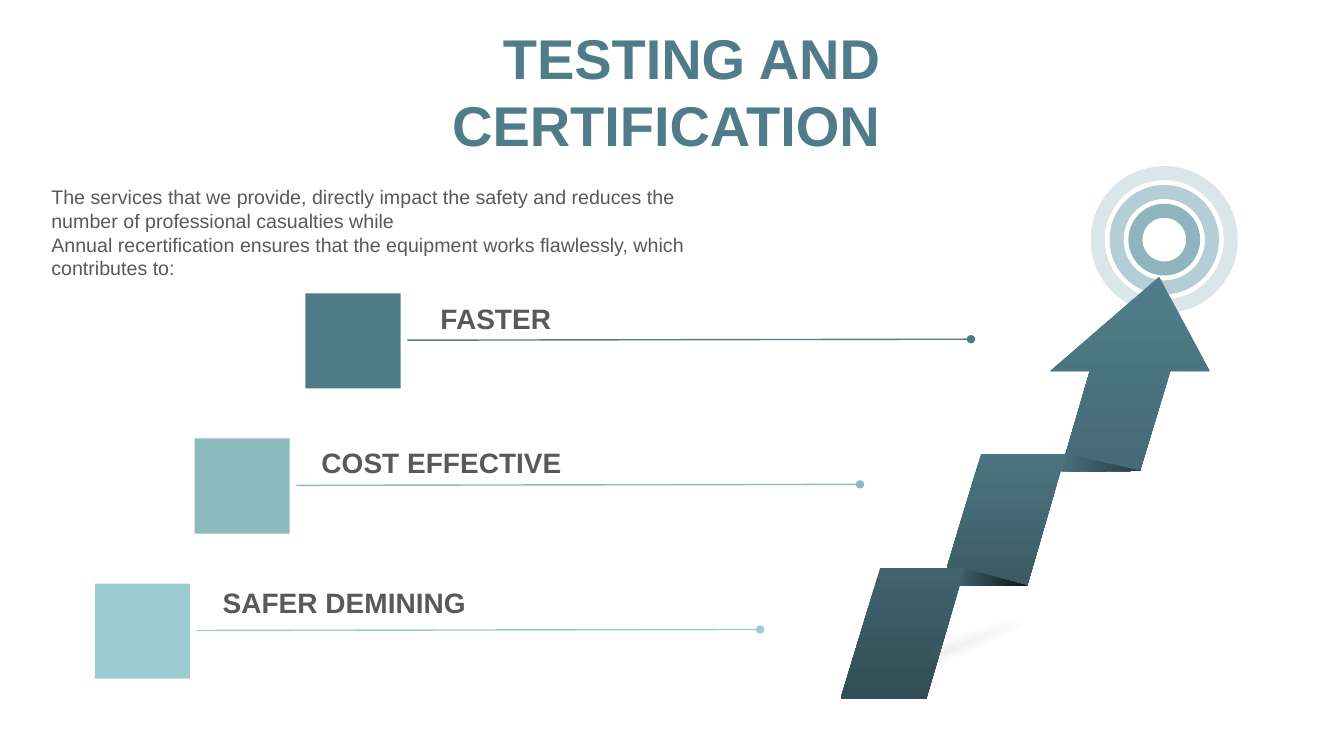
from pptx import Presentation, util as u
from pptx.dml.color import RGBColor
from pptx.enum import shapes, text
from pptx.oxml import parse_xml
from pptx.oxml.ns import nsdecls

THEME = {
    "font": "Arial", "title": 40, "label": 20, "body": 14,
    "teal": "507C89", "sage": "8CBABE", "aqua": "9CCCD2", "grey": "595959",
    "shadow": "808080", "rings": ("DAE6E9", "B5CDD4", "90B4BE"),
}

deck = Presentation()
deck.slide_width, deck.slide_height = u.Inches(13.33), u.Inches(7.5)
# The grid has 100 columns and 100 rows.
COL, ROW = deck.slide_width / 100, deck.slide_height / 100
slide = deck.slides.add_slide(deck.slide_layouts[6])
canvas = slide.shapes


def write(paragraphs, left, top, width, height, size, color, bold=False,
          align=text.PP_ALIGN.LEFT, insets=(0.1, 0.05, 0.1, 0.05)):
    """Add a wrapped text box placed in grid columns and rows."""
    frame = canvas.add_textbox(int(left * COL), int(top * ROW),
                               int(width * COL), int(height * ROW)).text_frame
    frame.word_wrap = True
    (frame.margin_left, frame.margin_top,
     frame.margin_right, frame.margin_bottom) = map(u.Inches, insets)
    for index, words in enumerate(paragraphs):
        paragraph = frame.add_paragraph() if index else frame.paragraphs[0]
        paragraph.alignment = align
        run = paragraph.add_run()
        run.text = words
        run.font.name, run.font.size, run.font.bold = THEME["font"], u.Pt(size), bold
        run.font.color.rgb = RGBColor.from_string(color)


def outline(points):
    """Add a closed, unlined polygon from grid points."""
    corners = [(int(x * COL), int(y * ROW)) for x, y in points]
    builder = canvas.build_freeform(*corners[0])
    builder.add_line_segments(corners[1:], close=True)
    polygon = builder.convert_to_shape()
    polygon.shadow.inherit = False
    polygon.line.fill.background()
    return polygon


# Target rings, from the outside in
for color, diameter in zip(THEME["rings"], (9.9, 7.1, 4.3)):
    side = int(diameter * COL)
    ring = canvas.add_shape(shapes.MSO_SHAPE.OVAL, int(86.63 * COL - side / 2),
                            int(31.7 * ROW - side / 2), side, side)
    ring.shadow.inherit = False
    ring.fill.background()
    ring.line.width = u.Pt(10)
    ring.line.color.rgb = RGBColor.from_string(color)

# Folded arrow: first colour, last colour, gradient angle, corners
arrow_parts = [
    ("507C89", "456B76", 270, [(86.25, 36.6), (90, 49.1), (87.08, 49.1), (84.83, 62.3),
                               (79.28, 60.1), (81.08, 49.1), (78.15, 49.1)]),
    ("48707B", "263C42", 0, [(79.28, 60.1), (84.83, 62.3), (78.9, 62.4)]),
    ("4B7581", "3A5B64", 270, [(73, 60), (79.3, 60), (76.43, 77.5),
                               (71.7, 75.2), (70.43, 75.2)]),
    ("3E616B", "0E1517", 0, [(71.7, 75.2), (76.43, 77.5), (71.33, 77.5)]),
    ("40636E", "324D55", 270, [(65.5, 75.1), (71.8, 75.1), (68.93, 92.4), (62.55, 92.4)]),
]
for first, last, angle, corners in arrow_parts:
    part = outline(corners)
    part.fill.gradient()
    part.fill.gradient_angle = angle
    for stop, color in zip(part.fill.gradient_stops, (first, last)):
        stop.color.rgb = RGBColor.from_string(color)

# Steps: label, colour, square left, label left, label top
steps = [
    ("FASTER", THEME["teal"], 22.73, 32.03, 39.2),
    ("COST EFFECTIVE", THEME["sage"], 14.48, 23.18, 58.27),
    ("SAFER DEMINING", THEME["aqua"], 7.05, 15.83, 76.8),
]
for index, (label, color, left, label_left, label_top) in enumerate(steps):
    top = 38.8 + 19.2 * index
    rule_left, rule_top = left + 7.58, top + 6.2
    rule = canvas.add_connector(
        shapes.MSO_CONNECTOR.STRAIGHT, int(rule_left * COL), int(rule_top * ROW),
        int((rule_left + 41.93) * COL), int((rule_top - 0.13) * ROW))
    rule.line.width = u.Pt(1)
    rule.line.color.rgb = RGBColor.from_string(color)
    rule.line._get_or_add_ln().append(parse_xml(f'<a:tailEnd type="oval" {nsdecls("a")}/>'))
    rule._element.spPr.append(parse_xml(f'<a:effectLst {nsdecls("a")}/>'))
    write([label], label_left, label_top, 38.25, 5.87, THEME["label"], THEME["grey"], bold=True)
    side = int(7.08 * COL)
    square = canvas.add_shape(shapes.MSO_SHAPE.RECTANGLE, int(left * COL),
                              int(top * ROW), side, side)
    square.shadow.inherit = False
    square.fill.solid()
    square.fill.fore_color.rgb = RGBColor.from_string(color)
    square.line.fill.background()

# Soft shadow cast by the arrow
cast = outline([(64.5, 87.5), (70.6, 88.2), (87.6, 75.4), (82.5, 76.4)])
cast.fill.solid()
cast.fill.fore_color.rgb = RGBColor.from_string(THEME["shadow"])
tint = cast._element.spPr.find(".//{*}srgbClr")
tint.append(parse_xml(f'<a:alpha val="25000" {nsdecls("a")}/>'))
effects = cast._element.spPr.find("{*}effectLst")
effects.append(parse_xml(f'<a:softEdge rad="{u.Inches(0.1)}" {nsdecls("a")}/>'))

write(["TESTING AND CERTIFICATION"], 26.78, 3.07, 39, 18, THEME["title"], THEME["teal"],
      bold=True, align=text.PP_ALIGN.RIGHT, insets=(0.08, 0, 0.04, 0))
write(["The services that we provide, directly impact the safety and reduces the number of "
       "professional casualties while",
       "Annual recertification ensures that the equipment works flawlessly, which "
       "contributes to:"],
      3.08, 23.87, 50.03, 13.87, THEME["body"], THEME["grey"])

deck.save("out.pptx")
